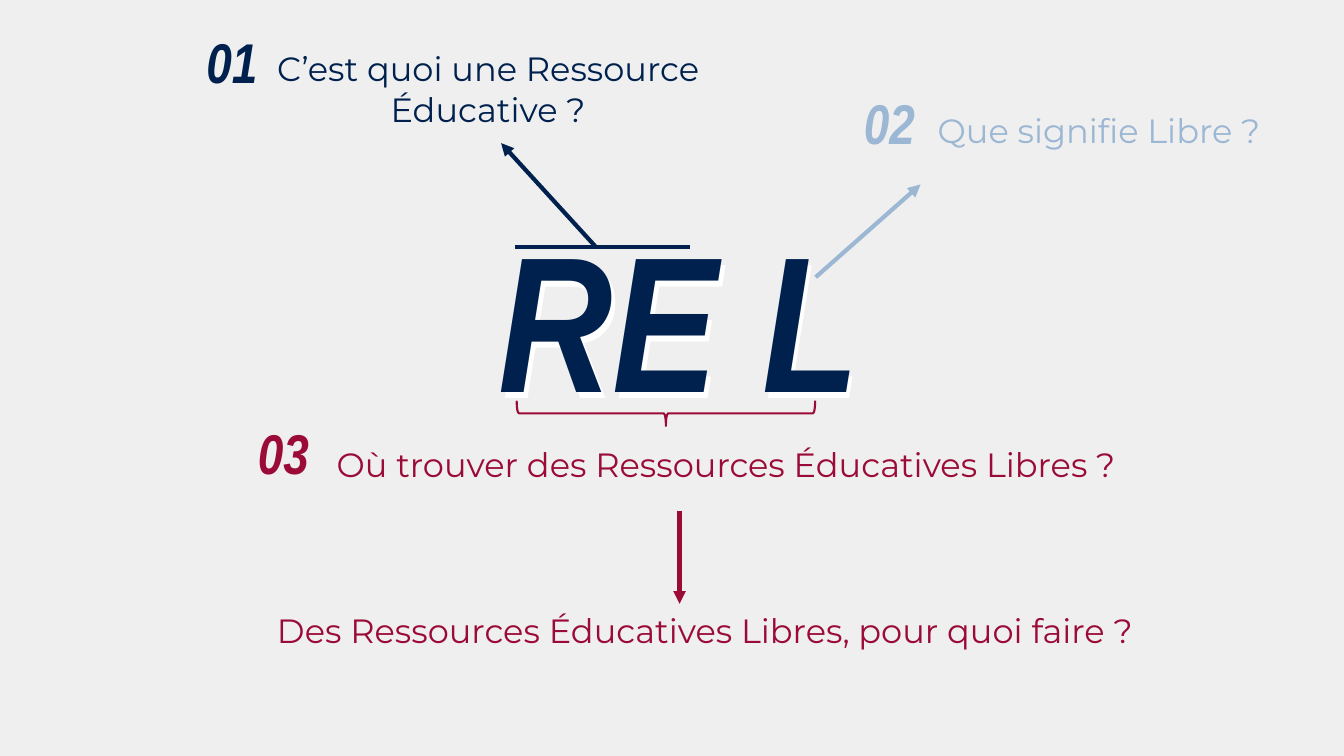
"""Build the slide that breaks REL down into its guiding questions."""
from lxml import etree
from pptx import Presentation
from pptx import util as u
from pptx.dml.color import RGBColor
from pptx.enum import shapes, text
from pptx.oxml import ns

NAVY, SKY, CRIMSON, WHITE = "00214E", "9CB7D3", "9B0B38", "FFFFFF"
QUESTION = {"name": "Montserrat", "size": u.Pt(24)}
NUMBER = {"name": "Arial Narrow", "size": u.Pt(40), "bold": True, "italic": True}
ACRONYM = {**NUMBER, "size": u.Pt(138)}


def paint(color_format, color):
    color_format.rgb = RGBColor.from_string(color)


def add_text(page, place, words, color, style):
    box = page.shapes.add_textbox(*map(u.Inches, place))
    box.text_frame.word_wrap = True
    box.text_frame.auto_size = text.MSO_AUTO_SIZE.SHAPE_TO_FIT_TEXT
    para = box.text_frame.paragraphs[0]
    para.alignment = text.PP_ALIGN.CENTER
    span = para.add_run()
    span.text = words
    for name, value in style.items():
        setattr(span.font, name, value)
    paint(span.font.color, color)
    return box


deck = Presentation()
deck.slide_width, deck.slide_height = u.Inches(13.33), u.Inches(7.5)
page = deck.slides.add_slide(deck.slide_layouts[6])
page.background.fill.solid()
paint(page.background.fill.fore_color, "EFEFEF")

questions = [
    ((2.43, 0.43, 4.82, 0.91), "C’est quoi une Ressource Éducative ?", NAVY),
    ((9.16, 1.04, 3.48, 0.5), "Que signifie Libre ?", SKY),
    ((3.2, 4.35, 8, 0.5), "Où trouver des Ressources Éducatives Libres ?", CRIMSON),
    ((2.57, 6, 8.84, 0.5), "Des Ressources Éducatives Libres, pour quoi faire ?", CRIMSON),
]
for place, words, color in questions:
    add_text(page, place, words, color, QUESTION)

lines = [
    ((5.91, 2.45, 4.97, 1.42), NAVY, 3, True),
    ((8.09, 2.75, 9.13, 1.83), SKY, 3, True),
    ((6.74, 5.07, 6.74, 5.99), CRIMSON, 3, True),
    ((5.11, 2.45, 6.84, 2.45), NAVY, 2.25, False),
]
for ends, color, width, has_arrow in lines:
    line = page.shapes.add_connector(shapes.MSO_CONNECTOR.STRAIGHT, *map(u.Inches, ends))
    line.line.width = u.Pt(width)
    paint(line.line.color, color)
    if has_arrow:
        etree.SubElement(line.line._get_or_add_ln(), ns.qn("a:tailEnd"), type="triangle")
    etree.SubElement(line._element.spPr, ns.qn("a:effectLst"))

brace = page.shapes.add_shape(
    shapes.MSO_SHAPE.LEFT_BRACE, *map(u.Inches, (6.48, 2.62, 0.25, 2.96)))
brace.rotation = 270
brace.shadow.inherit = False
brace.fill.background()
brace.line.width = u.Pt(1.5)
paint(brace.line.color, CRIMSON)

acronym = add_text(page, (3.62, 1.93, 6.23, 2.42), "RE L", NAVY, ACRONYM)
effects = etree.SubElement(acronym._element.spPr, ns.qn("a:effectLst"))
shadow = etree.SubElement(effects, ns.qn("a:outerShdw"), dist=str(u.Inches(0.07)),
                          dir=str(60 * 60000), algn="tl", rotWithShape="0")
etree.SubElement(shadow, ns.qn("a:srgbClr"), val=WHITE)

numbers = [(1.91, 0.22, NAVY), (8.43, 0.83, SKY), (2.42, 4.1, CRIMSON)]
for order, (left, top, color) in enumerate(numbers, 1):
    number = add_text(page, (left, top, 0.78, 0.77), f"{order:02}", color, NUMBER)
    font = number.text_frame.paragraphs[0].runs[0]._r.get_or_add_rPr()
    outline = etree.Element(ns.qn("a:ln"), w=str(u.Pt(0.75)))
    fill = etree.SubElement(outline, ns.qn("a:solidFill"))
    etree.SubElement(fill, ns.qn("a:srgbClr"), val=WHITE)
    font.insert(0, outline)

deck.save("out.pptx")
